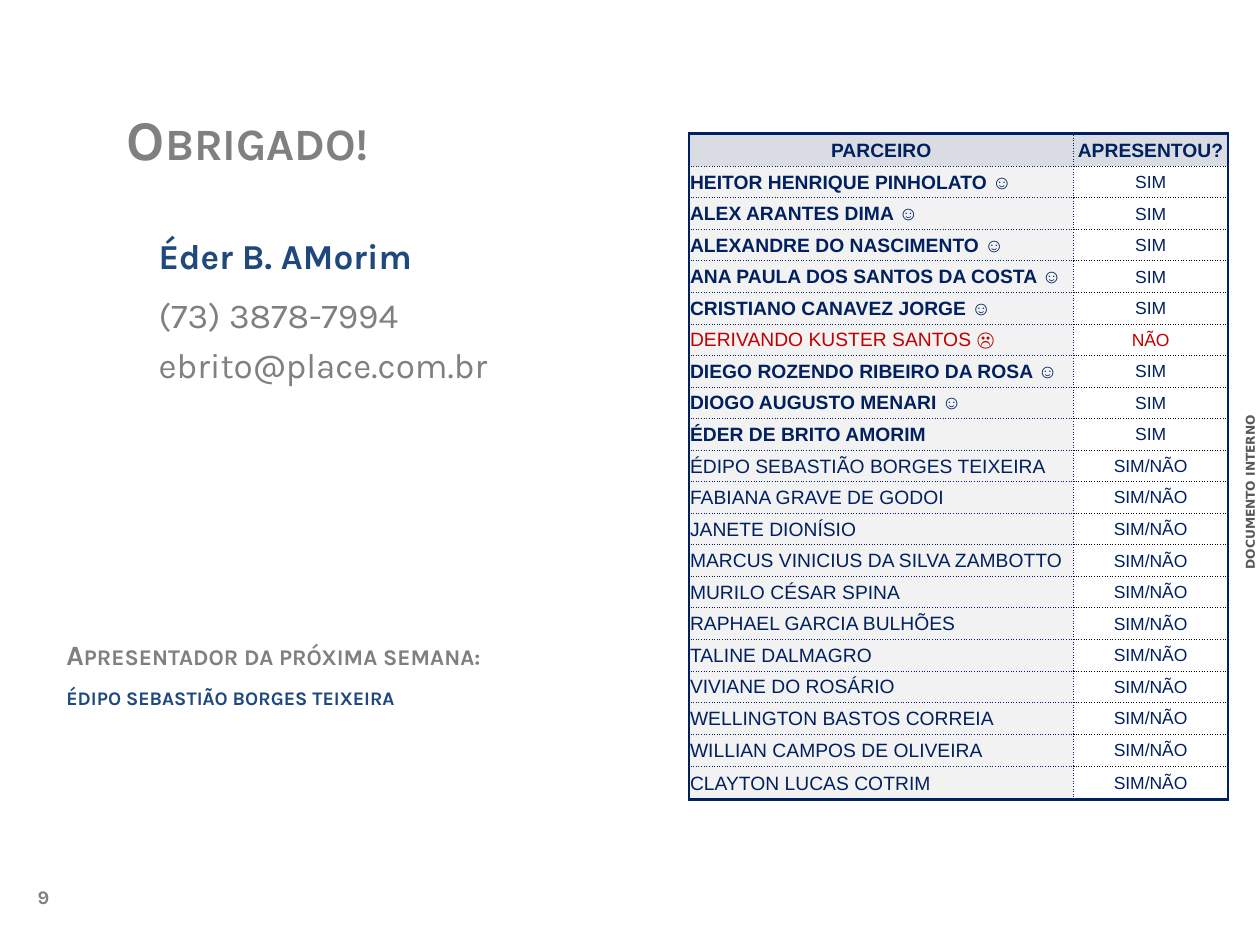
from lxml.etree import SubElement
from pptx import Presentation
from pptx.dml.color import RGBColor
from pptx.enum.text import MSO_ANCHOR, PP_ALIGN
from pptx.oxml import parse_xml
from pptx.oxml.ns import nsdecls, qn
from pptx.util import Cm, Pt

COLORS = {
    "gray": "808080", "dark_gray": "595959", "blue": "1F497D",
    "navy": "002060", "red": "C00000", "black": "000000",
    "header": "D9DDE3", "name": "F2F2F2", "answer": "FFFFFF",
}

# text, (left, top, width, height) in cm, format
TEXTS = [
    ("DOCUMENTO INTERNO", (23.11, 9.35, 4.19, 0.56),
     {"size": 7, "color": "dark_gray", "bold": True, "name": "DejaVu Sans", "rotation": 270}),
    ("9", (0.51, 17.73, 1.4, 0.74), {"size": 11, "color": "gray", "bold": True}),
    ("Obrigado!", (1.7, 1.98, 6.6, 1.63),
     {"size": 32, "color": "gray", "bold": True, "small_caps": True, "align": PP_ALIGN.CENTER}),
    ("Apresentador da próxima semana:", (1.09, 12.73, 21.59, 0.94),
     {"size": 16, "color": "gray", "bold": True, "small_caps": True}),
    ("Éder B. AMorim", (2.95, 4.6, 19.84, 1.19), {"size": 20, "color": "blue", "bold": True}),
    ("ebrito@place.com.br", (2.95, 6.81, 19.89, 1.19), {"size": 20, "color": "gray"}),
    ("(73) 3878-7994", (2.95, 5.79, 19.89, 0.99), {"size": 20, "color": "gray"}),
    ("ÉDIPO SEBASTIÃO BORGES TEIXEIRA", (1.09, 13.72, 19.84, 1.19),
     {"size": 11, "color": "blue", "bold": True}),
]

HEADER = ("PARCEIRO", "APRESENTOU?")
PARTNERS = [
    ("SIM", ["HEITOR HENRIQUE PINHOLATO ☺", "ALEX ARANTES DIMA ☺", "ALEXANDRE DO NASCIMENTO ☺",
             "ANA PAULA DOS SANTOS DA COSTA ☺", "CRISTIANO CANAVEZ JORGE ☺"]),
    ("NÃO", ["DERIVANDO KUSTER SANTOS ☹"]),
    ("SIM", ["DIEGO ROZENDO RIBEIRO DA ROSA ☺", "DIOGO AUGUSTO MENARI ☺", "ÉDER DE BRITO AMORIM"]),
    ("SIM/NÃO", ["ÉDIPO SEBASTIÃO BORGES TEIXEIRA", "FABIANA GRAVE DE GODOI", "JANETE DIONÍSIO",
                 "MARCUS VINICIUS DA SILVA ZAMBOTTO", "MURILO CÉSAR SPINA",
                 "RAPHAEL GARCIA BULHÕES", "TALINE DALMAGRO", "VIVIANE DO ROSÁRIO",
                 "WELLINGTON BASTOS CORREIA", "WILLIAN CAMPOS DE OLIVEIRA",
                 "CLAYTON LUCAS COTRIM"]),
]
TABLE_LEFT, TABLE_TOP, TABLE_HEIGHT = 13.89, 2.69, 13.43
COLUMN_WIDTHS = (7.75, 3.11)
TALL_ROW = 0.66
CELL_MARGINS = {"margin_left": Cm(0.02), "margin_right": Cm(0.02),
                "margin_top": Cm(0.02), "margin_bottom": 0}


def write(paragraph, text, size, color, bold=False, name="Karla",
          align=PP_ALIGN.LEFT, small_caps=False):
    paragraph.alignment = align
    run = paragraph.add_run()
    run.text = text
    for key, value in {"size": Pt(size), "bold": bold, "name": name}.items():
        setattr(run.font, key, value)
    run.font.color.rgb = RGBColor.from_string(COLORS[color])
    if small_caps:
        run._r.get_or_add_rPr().set("cap", "small")


def add_text(slide, text, box, style):
    style = dict(style)
    shape = slide.shapes.add_textbox(*map(Cm, box))
    shape.rotation = style.pop("rotation", 0)
    shape.text_frame.word_wrap = True
    write(shape.text_frame.paragraphs[0], text, **style)


def set_borders(cell, row, column, last_row):
    """Solid frame around the table, dotted lines inside it."""
    inner = "black" if column else "navy"
    borders = [("lnL", column == 0, "navy"), ("lnR", column == 1, "navy"),
               ("lnT", row == 0, inner), ("lnB", row == last_row, inner)]
    properties = cell._tc.get_or_add_tcPr()
    for position, (tag, is_frame, inner_color) in enumerate(borders):
        width, dash = (Pt(1.5), "solid") if is_frame else (Pt(0.5), "sysDot")
        line = parse_xml(f'<a:{tag} {nsdecls("a")} w="{width}"/>')
        fill = SubElement(line, qn("a:solidFill"))
        SubElement(fill, qn("a:srgbClr"), val=COLORS["navy" if is_frame else inner_color])
        SubElement(line, qn("a:prstDash"), val=dash)
        properties.insert(position, line)


def add_partner_table(slide):
    rows = [HEADER] + [(name, answer) for answer, names in PARTNERS for name in names]
    last_row = len(rows) - 1
    tall_rows = {0, last_row - 1, last_row}
    row_height = (TABLE_HEIGHT - len(tall_rows) * TALL_ROW) / (len(rows) - len(tall_rows))
    table = slide.shapes.add_table(
        len(rows), len(HEADER), Cm(TABLE_LEFT), Cm(TABLE_TOP),
        Cm(sum(COLUMN_WIDTHS)), Cm(TABLE_HEIGHT)).table
    table.first_row = table.horz_banding = False
    for column, width in zip(table.columns, COLUMN_WIDTHS):
        column.width = Cm(width)
    for row, texts in enumerate(rows):
        table.rows[row].height = Cm(TALL_ROW if row in tall_rows else row_height)
        answer = texts[1]
        for column, text in enumerate(texts):
            cell = table.cell(row, column)
            for key, value in CELL_MARGINS.items():
                setattr(cell, key, value)
            cell.vertical_anchor = MSO_ANCHOR.MIDDLE
            cell.fill.solid()
            fill = "header" if row == 0 else ("name", "answer")[column]
            cell.fill.fore_color.rgb = RGBColor.from_string(COLORS[fill])
            set_borders(cell, row, column, last_row)
            write(cell.text_frame.paragraphs[0], text, name="Arial",
                  size=10 if row and column else 11,
                  color="red" if answer == "NÃO" else "navy",
                  bold=row == 0 or (column == 0 and answer == "SIM"),
                  align=PP_ALIGN.CENTER if row == 0 or column else PP_ALIGN.LEFT)


def main():
    presentation = Presentation()
    presentation.slide_width, presentation.slide_height = Cm(25.4), Cm(19.05)
    slide = presentation.slides.add_slide(presentation.slide_layouts[6])
    for text, box, style in TEXTS:
        add_text(slide, text, box, style)
    add_partner_table(slide)
    presentation.save("out.pptx")


if __name__ == "__main__":
    main()
